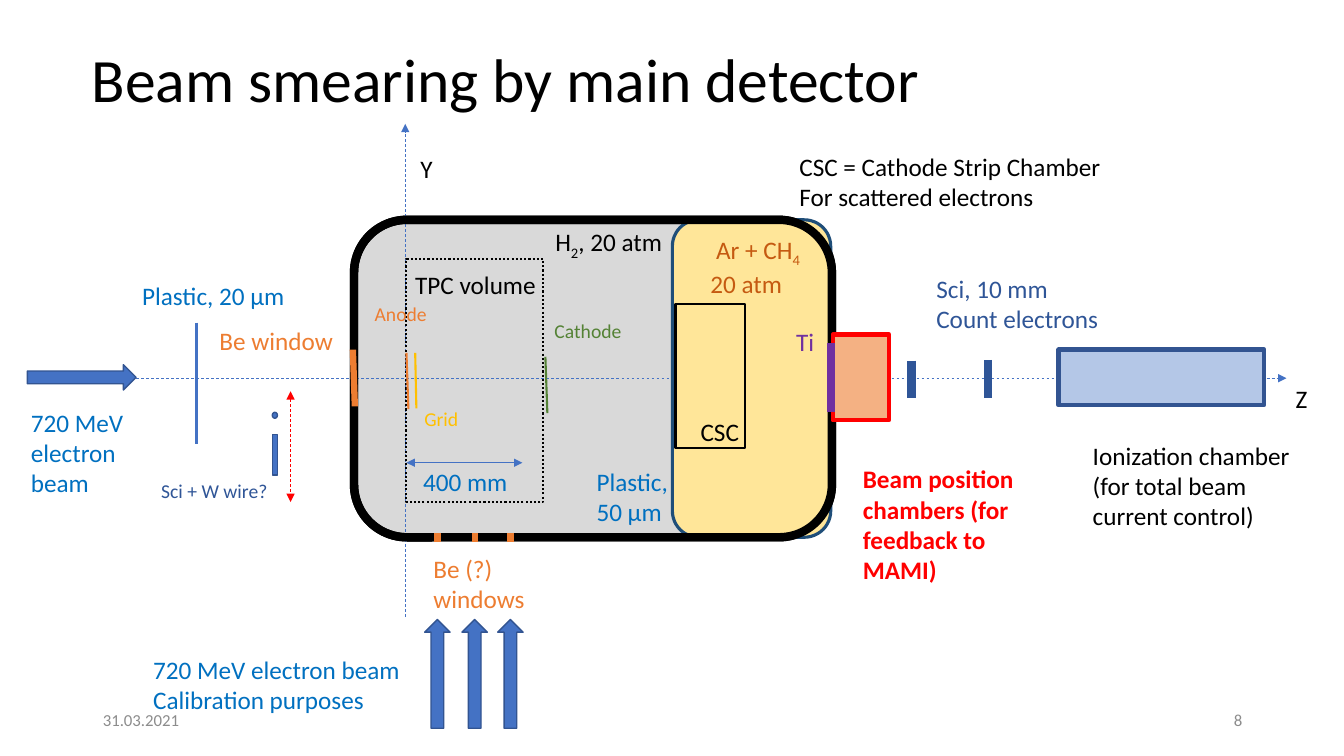
from lxml import etree
from pptx import Presentation
from pptx.dml.color import RGBColor
from pptx.enum.dml import MSO_LINE
from pptx.enum.shapes import MSO_CONNECTOR, MSO_SHAPE
from pptx.enum.text import MSO_ANCHOR, PP_ALIGN
from pptx.oxml.ns import qn
from pptx.util import Cm, Pt

RECT, ROUND = MSO_SHAPE.RECTANGLE, MSO_SHAPE.ROUNDED_RECTANGLE
ARROW, OVAL = MSO_SHAPE.RIGHT_ARROW, MSO_SHAPE.OVAL
STRAIGHT = MSO_CONNECTOR.STRAIGHT
DASH, DOT = MSO_LINE.DASH, MSO_LINE.ROUND_DOT
TOP, MIDDLE = MSO_ANCHOR.TOP, MSO_ANCHOR.MIDDLE
LEFT, RIGHT = PP_ALIGN.LEFT, PP_ALIGN.RIGHT


class Theme:
    font = "Calibri"
    title, label, small, footer = 44, 18, 14, 12
    black, muted, red = "000000", "8C8C8C", "FF0000"
    blue, edge, navy, sky = "4472C4", "325491", "2F5597", "0070C0"
    orange, rust, gold = "ED7D31", "C55A11", "FFC000"
    green, purple = "548235", "7030A0"
    hydrogen, argon, argon_edge = "D9D9D9", "FFE699", "1F4E79"
    position, ionization = "F4B183", "B4C7E7"


T = Theme

TITLE = "Beam smearing by main detector"
TITLE_BOX = (2.06, 0.25, 29.21, 3.68)
VESSEL_BOX = (8.92, 5.54, 12.04, 8.0)
BEAM_SIZE = (2.74, 0.64)
CALIBRATION_X = (11.02, 11.96, 12.86)
CALIBRATION_TOP = 16.66
PORT_Y = (13.44, 13.67)

VESSEL = (ROUND, VESSEL_BOX, T.hydrogen, T.black, 6, None)

AXES = [
    ((1.42, 9.53), (32.41, 9.53), T.blue, 0.5, DASH, "end"),
    ((10.21, 15.54), (10.21, 3.12), T.blue, 0.5, DASH, "end"),
]

SHAPES = [
    (ARROW, (0.69, 9.19, *BEAM_SIZE), T.blue, T.edge, 1, None),
    (RECT, (6.86, 10.95, 0.13, 1.02), T.blue, T.edge, 1, None),
    (OVAL, (6.86, 10.39, 0.13, 0.15), T.blue, T.edge, 1, None),
    (ROUND, (16.94, 5.54, 3.99, 8.0), T.argon, T.argon_edge, 2.25, None),
    (ROUND, VESSEL_BOX, None, T.black, 6, None),
    (RECT, (17.02, 7.67, 1.75, 3.61), None, T.black, 1.5, None),
    (RECT, (10.24, 6.53, 3.45, 6.12), None, T.black, 1.5, DOT),
    (RECT, (20.98, 8.43, 1.42, 2.16), T.position, T.red, 3, None),
    (RECT, (26.67, 8.81, 5.18, 1.4), T.ionization, T.edge, 3, None),
]

LINES = [
    ((4.95, 8.13), (4.95, 11.18), T.blue, 2.25, None, None),
    ((7.32, 9.86), (7.32, 12.65), T.red, 0.5, DASH, "both"),
    ((10.24, 8.89), (10.29, 10.31), T.orange, 1.5, None, None),
    ((13.74, 8.99), (13.79, 10.41), T.green, 1.5, None, None),
    ((10.46, 8.89), (10.49, 10.29), T.gold, 1.5, None, None),
    ((10.24, 11.66), (13.16, 11.66), T.blue, 0.5, None, "both"),
    ((22.96, 9.09), (22.96, 10.03), T.navy, 6, None, None),
    ((24.89, 9.07), (24.89, 10.03), T.navy, 6, None, None),
    ((8.89, 8.81), (8.94, 10.24), T.orange, 4.5, None, None),
    ((20.93, 8.64), (20.93, 10.39), T.purple, 6, None, None),
]

LABELS = [
    ("Y", 10.34, 3.73, 0.81, 1, T.label, T.black),
    ("Z", 32.39, 9.53, 0.81, 1, T.label, T.black),
    ("Plastic, 20 μm", 3.33, 6.93, 5.49, 1, T.label, T.sky),
    ("Sci + W wire?", 3.81, 11.94, 3.43, 1, T.small, T.navy),
    ("H_2_, 20 atm", 13.74, 5.59, 3.63, 1, T.label, T.black),
    ("Plastic, 50 μm", 14.78, 11.63, 2.67, 2, T.label, T.sky),
    (" Ar + CH_4_ 20 atm", 17.65, 5.77, 3.07, 2, T.label, T.rust),
    ("CSC", 17.4, 10.36, 1.5, 1, T.label, T.black),
    ("400 mm", 10.41, 11.63, 3.12, 1, T.label, T.sky),
    ("TPC volume", 10.21, 6.65, 4.29, 1, T.label, T.black),
    ("Sci, 10 mm\nCount electrons", 23.34, 6.76, 6.65, 2, T.label, T.navy),
    ("Ionization chamber (for total beam current control)",
     27.28, 10.97, 5.97, 3, T.label, T.black),
    ("CSC = Cathode Strip Chamber\nFor scattered electrons",
     19.89, 3.68, 9.12, 2, T.label, T.black),
    ("Be window", 5.28, 8.08, 3.63, 1, T.label, T.orange),
    ("Ti", 19.81, 8.1, 3.02, 1, T.label, T.purple),
    ("Be (?) windows", 10.67, 13.82, 3.63, 2, T.label, T.orange),
    ("720 MeV electron beam", 0.53, 10.13, 3.28, 3, T.label, T.sky),
    ("720 MeV electron beam\nCalibration purposes",
     3.61, 16.36, 7.44, 2, T.label, T.sky),
    ("Cathode", 13.72, 7.9, 3.63, 1, T.small, T.green),
    ("Grid", 10.44, 10.13, 3.63, 1, T.small, T.gold),
    ("Anode", 9.19, 7.49, 3.63, 1, T.small, T.orange),
]
FEEDBACK = ("Beam position chambers (for feedback to MAMI)",
            21.49, 11.56, 5.13, 4, T.label, T.red)
FOOTERS = [("31.03.2021", 2.34, LEFT), ("8", 23.93, RIGHT)]


def rgb(color):
    return RGBColor.from_string(color)


def style_line(line, color, width, dash):
    line.color.rgb = rgb(color)
    line.width = Pt(width)
    if dash is not None:
        line.dash_style = dash


def style_run(r, size, color, bold=False):
    r.font.name = T.font
    r.font.size = Pt(size)
    r.font.bold = bold
    r.font.color.rgb = rgb(color)


def add_part(s, kind, box, fill, color, width, dash):
    sp = s.shapes.add_shape(kind, *map(Cm, box))
    sp.shadow.inherit = False
    if fill:
        sp.fill.solid()
        sp.fill.fore_color.rgb = rgb(fill)
    else:
        sp.fill.background()
    style_line(sp.line, color, width, dash)
    return sp


def add_line(s, start, end, color, width, dash, arrows):
    cx = s.shapes.add_connector(STRAIGHT, *map(Cm, start + end))
    style_line(cx.line, color, width, dash)
    ln = cx.line._get_or_add_ln()
    ends = {"end": ["a:tailEnd"], "both": ["a:headEnd", "a:tailEnd"]}
    for tag in ends.get(arrows, []):
        etree.SubElement(ln, qn(tag)).set("type", "triangle")
    etree.SubElement(cx._element.spPr, qn("a:effectLst"))


def add_label(s, text, x, y, width, rows, size, color,
              bold=False, anchor=TOP, align=LEFT):
    height = 0.25 + rows * size * 1.2 * 2.54 / 72
    tf = s.shapes.add_textbox(Cm(x), Cm(y), Cm(width), Cm(height)).text_frame
    tf.word_wrap = len(text) > 3
    tf.vertical_anchor = anchor
    for i, row in enumerate(text.split("\n")):
        p = tf.add_paragraph() if i else tf.paragraphs[0]
        p.alignment = align
        for j, piece in enumerate(row.split("_")):
            r = p.add_run()
            r.text = piece
            style_run(r, size, color, bold)
            if j % 2:
                r._r.get_or_add_rPr().set("baseline", "-25000")


def main():
    prs = Presentation()
    prs.slide_width, prs.slide_height = Cm(33.86), Cm(19.05)
    s = prs.slides.add_slide(prs.slide_layouts[5])

    title = s.shapes.title
    title.left, title.top, title.width, title.height = map(Cm, TITLE_BOX)
    tf = title.text_frame
    tf.text = TITLE
    tf.vertical_anchor = MIDDLE
    p = tf.paragraphs[0]
    p.alignment = LEFT
    p.line_spacing = 0.9
    style_run(p.runs[0], T.title, T.black)

    add_part(s, *VESSEL)
    for axis in AXES:
        add_line(s, *axis)
    for part in SHAPES:
        add_part(s, *part)
    for line in LINES:
        add_line(s, *line)
    for x in CALIBRATION_X:
        add_line(s, (x, PORT_Y[0]), (x, PORT_Y[1]), T.orange, 4.5, None, None)
        box = (x - BEAM_SIZE[0] / 2, CALIBRATION_TOP, *BEAM_SIZE)
        add_part(s, ARROW, box, T.blue, T.edge, 1, None).rotation = 270
    for label in LABELS:
        add_label(s, *label)
    add_label(s, *FEEDBACK, bold=True)
    for text, x, align in FOOTERS:
        add_label(s, text, x, 17.77, 7.62, 1, T.footer, T.muted,
                  anchor=MIDDLE, align=align)
    prs.save("out.pptx")


if __name__ == "__main__":
    main()
